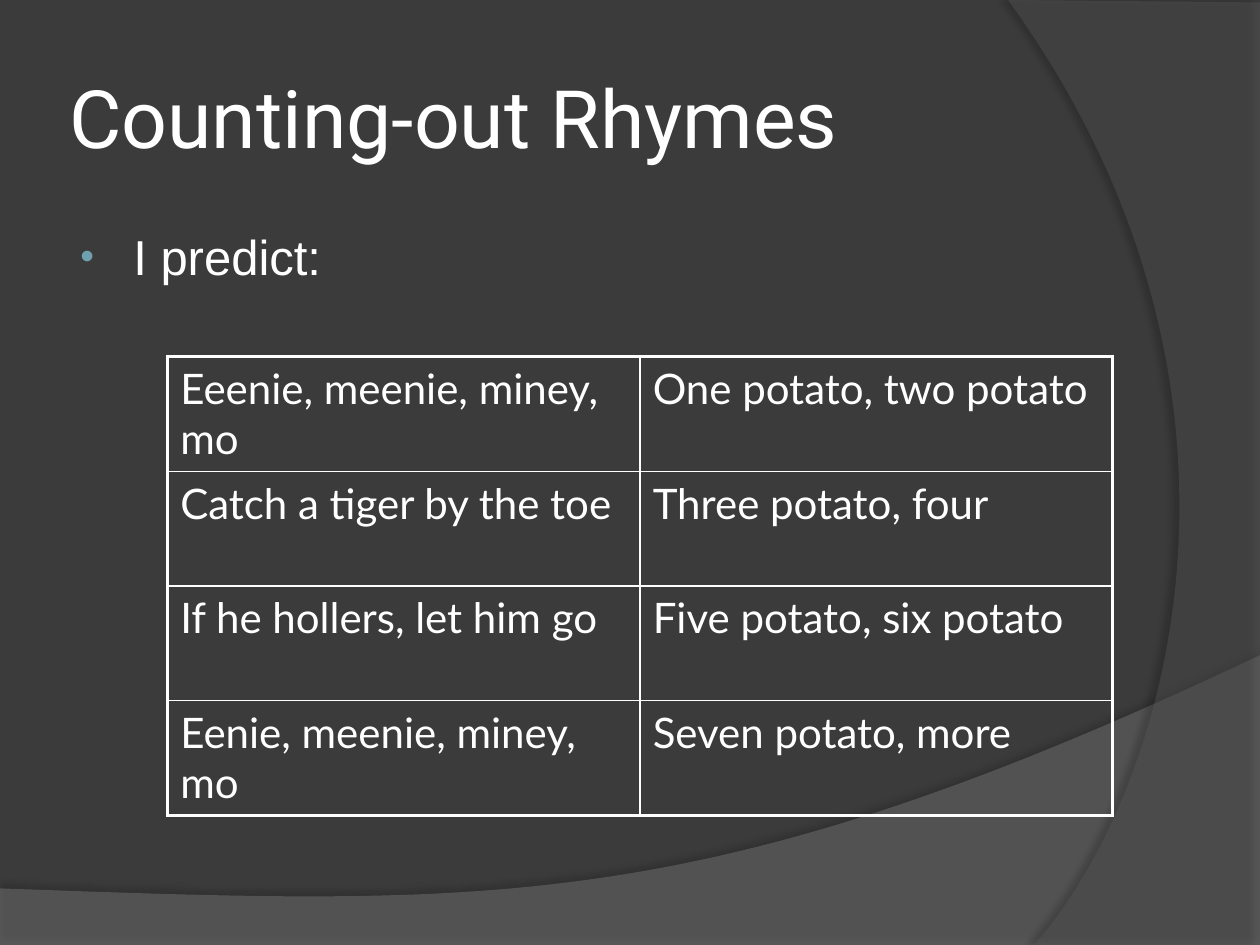
import dataclasses

import pptx
import pptx.dml.color
import pptx.enum.text
import pptx.oxml
import pptx.oxml.ns
import pptx.util
from lxml import etree

Cm = pptx.util.Cm
Pt = pptx.util.Pt
qn = pptx.oxml.ns.qn


@dataclasses.dataclass(frozen=True)
class Theme:
    back: str = "3B3B3B"
    wave: str = "7C7C7C"
    arc: str = "595959"
    ink: str = "FFFFFF"
    dot: str = "6EA0B0"
    shade: str = "000000"
    head: float = 46
    body: float = 28
    cell: float = 24
    thick: float = 2.25
    thin: float = 1


THEME = Theme()
RHYMES = [
    ("Eeenie, meenie, miney, mo", "One potato, two potato"),
    ("Catch a tiger by the toe", "Three potato, four"),
    ("If he hollers, let him go", "Five potato, six potato"),
    ("Eenie, meenie, miney, mo", "Seven potato, more"),
]


def rgb(code):
    return pptx.dml.color.RGBColor.from_string(code)


def node(mother, tag, **attrs):
    """Add a drawing element below its mother."""
    return etree.SubElement(
        mother, qn("a:" + tag), {key: str(val) for key, val in attrs.items()})


def text(frame, words, font, size, color=THEME.ink, middle=False, inset=None):
    """Write one formatted paragraph and return it."""
    frame.word_wrap = True
    if middle:
        frame.vertical_anchor = pptx.enum.text.MSO_ANCHOR.MIDDLE
    if inset is not None:
        frame.margin_left = frame.margin_right = Cm(inset)
        frame.margin_top = frame.margin_bottom = Cm(inset)
    para = frame.paragraphs[0]
    run = para.add_run()
    run.text = words
    run.font.name = font
    run.font.size = Pt(size)
    run.font.color.rgb = rgb(color)
    return para


def bullet(para, left, hang, color, scale):
    """Give the paragraph a hanging coloured bullet."""
    props = para._p.get_or_add_pPr()
    props.set("marL", str(Cm(left)))
    props.set("indent", str(-Cm(hang)))
    node(node(props, "buClr"), "srgbClr", val=color)
    node(props, "buSzPct", val=scale * 1000)
    node(props, "buFont", typeface="Arial")
    node(props, "buChar", char="•")


def curve(start, pull, push, end, steps=60):
    """List points along a cubic curve, without its start."""
    points = []
    for step in range(1, steps + 1):
        t = step / steps
        u = 1 - t
        points.append(tuple(
            u**3 * a + 3 * u * u * t * b + 3 * u * t * t * c + t**3 * d
            for a, b, c, d in zip(start, pull, push, end)))
    return points


def sweep(slide, points, color, alpha, shade, dist, turn):
    """Draw a translucent outline with a soft shadow."""
    spots = [(Cm(x), Cm(y)) for x, y in points]
    build = slide.shapes.build_freeform(*spots[0])
    build.add_line_segments(spots[1:], close=True)
    shape = build.convert_to_shape()
    shape.fill.solid()
    shape.fill.fore_color.rgb = rgb(color)
    shape.line.fill.background()
    props = shape._element.spPr
    tint = props.find(qn("a:solidFill")).find(qn("a:srgbClr"))
    node(tint, "alpha", val=alpha * 1000)
    shape.shadow.inherit = False
    cast = node(props.find(qn("a:effectLst")), "outerShdw", blurRad=Pt(4),
                dist=Pt(dist), dir=turn * 60000, algn="ctr", rotWithShape=0)
    node(node(cast, "srgbClr", val=THEME.shade), "alpha", val=shade * 1000)


def edges(cell, widths):
    """Rule the cell's left, right, top and bottom sides."""
    props = cell._tc.get_or_add_tcPr()
    for spot, (side, width) in enumerate(zip("LRTB", widths)):
        line = node(props, "ln" + side, w=Pt(width))
        node(node(line, "solidFill"), "srgbClr", val=THEME.ink)
        props.insert(spot, line)


def grid(slide, rows, left, top, wide, high):
    """Draw the table with a thick frame and thin inner rules."""
    count, across = len(rows), len(rows[0])
    table = slide.shapes.add_table(
        count, across, Cm(left), Cm(top), Cm(wide), Cm(high)).table
    table.first_row = table.horz_banding = False
    for r, row in enumerate(rows):
        for c, words in enumerate(row):
            cell = table.cell(r, c)
            cell.fill.background()
            text(cell.text_frame, words, font="Lato", size=THEME.cell)
            outer = (c == 0, c == across - 1, r == 0, r == count - 1)
            edges(cell, [THEME.thick if out else THEME.thin for out in outer])


def main():
    deck = pptx.Presentation()
    deck.slide_width, deck.slide_height = Cm(25.4), Cm(19.05)
    slide = deck.slides.add_slide(deck.slide_layouts[6])
    slide.background.fill.solid()
    slide.background.fill.fore_color.rgb = rgb(THEME.back)

    # Background sweeps
    rise, fall = (25.4, 13.21), (0, 17.91)
    wave = [(0, 19.07), (25.4, 19.07), rise]
    wave += curve(rise, (14.2, 18.52), (9.93, 18.26), fall)
    sweep(slide, wave, THEME.wave, alpha=45, shade=35, dist=3.5, turn=270)
    foot, peak = (20.85, 19.05), (20.32, 0)
    arc = [(25.4, 0.05), (25.4, 19.05), foot]
    arc += curve(foot, (23.75, 15.72), (25.86, 7.62), peak)
    sweep(slide, arc, THEME.arc, alpha=40, shade=45, dist=4, turn=180)

    # Title
    title = slide.shapes.add_textbox(Cm(1.27), Cm(0.76), Cm(20.75), Cm(3.18))
    text(title.text_frame, "Counting-out Rhymes", font="Roboto",
         size=THEME.head, middle=True, inset=0.13)

    # Body
    body = slide.shapes.add_textbox(Cm(1.27), Cm(4.45), Cm(20.75), Cm(12.57))
    para = text(body.text_frame, "I predict:", font="Arial", size=THEME.body)
    para.space_before = Pt(2)
    bullet(para, left=1.17, hang=1.07, color=THEME.dot, scale=80)

    # Rhyme table
    grid(slide, RHYMES, left=3.38, top=7.19, wide=19.05, high=9.25)

    deck.save("out.pptx")


if __name__ == "__main__":
    main()
